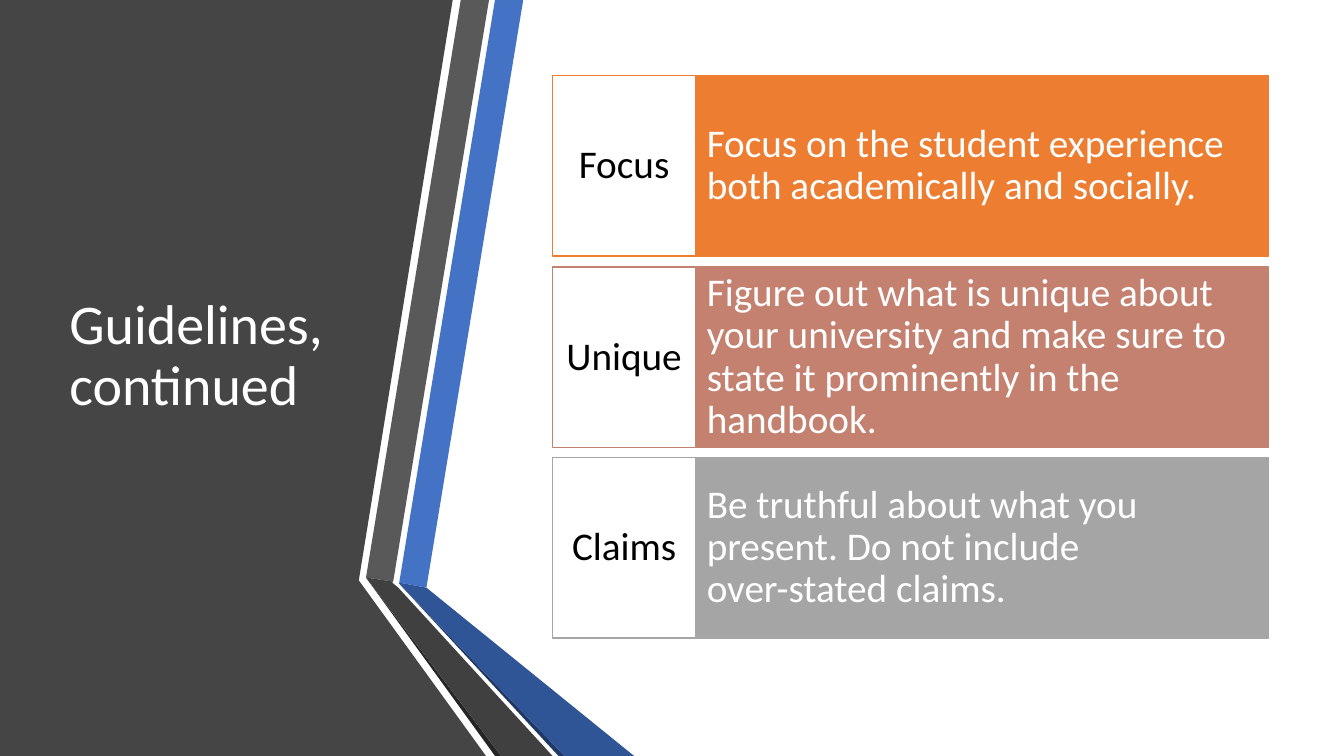
from pptx import Presentation
from pptx.dml.color import RGBColor
from pptx.enum.shapes import MSO_SHAPE
from pptx.enum.text import MSO_ANCHOR, PP_ALIGN
from pptx.util import Emu, Pt

RECTANGLE = MSO_SHAPE.RECTANGLE
MIDDLE = MSO_ANCHOR.MIDDLE
LEFT = PP_ALIGN.LEFT
CENTER = PP_ALIGN.CENTER

EMU_PER_PX = 9144
FONT = "Calibri"
WHITE = "FFFFFF"
BLACK = "000000"

RIBBON_PARTS = [
    ("454545", [(0, 0), (449, 0), (356, 575), (356, 576), (482, 750), (0, 750)]),
    ("4472C4", [(396, 578), (423, 583), (519, 0), (491, 0)]),
    ("595959", [(485, 0), (457, 0), (363, 573), (390, 577)]),
    ("262626", [(363, 573), (491, 750), (497, 750)]),
    ("203864", [(396, 579), (554, 750), (560, 750)]),
    ("2F5597", [(396, 579), (560, 750), (629, 750), (423, 583), (396, 578)]),
    ("404040", [(548, 750), (395, 583), (389, 578), (390, 577), (363, 573), (497, 750)]),
]

GUIDELINES = [
    ("Focus", "Focus on the student experience both academically and socially.", "ED7D31"),
    ("Unique", "Figure out what is unique about your university and make sure to "
     "state it prominently in the handbook.", "C48170"),
    ("Claims", "Be truthful about what you present. Do not include\vover-stated claims.",
     "A5A5A5"),
]
ROWS_TOP = 75
ROW_PITCH = 189.5
ROW_HEIGHT = 179
LABEL_LEFT, LABEL_WIDTH = 548, 142
DETAIL_LEFT, DETAIL_WIDTH = 690, 568


def px(length):
    """Convert px to EMU."""
    return Emu(length * EMU_PER_PX)


def color(hex_string):
    """Convert a hex string to a colour."""
    return RGBColor.from_string(hex_string)


def write_text(shape, text, size, text_color, alignment, margins):
    """Fill a shape with one vertically centred paragraph."""
    side, end = margins
    text_frame = shape.text_frame
    text_frame.word_wrap = True
    text_frame.vertical_anchor = MIDDLE
    text_frame.margin_left = text_frame.margin_right = px(side)
    text_frame.margin_top = text_frame.margin_bottom = px(end)
    text_frame.text = text
    paragraph = text_frame.paragraphs[0]
    paragraph.alignment = alignment
    paragraph.line_spacing = 0.9
    for run in paragraph.runs:
        run.font.name = FONT
        run.font.size = Pt(size)
        run.font.color.rgb = color(text_color)


def add_ribbon_part(slide, fill, points):
    """Draw one closed polygon of the folded ribbon."""
    builder = slide.shapes.build_freeform(*points[0], scale=EMU_PER_PX)
    builder.add_line_segments(points[1:], close=True)
    shape = builder.convert_to_shape()
    shape.shadow.inherit = False
    shape.fill.solid()
    shape.fill.fore_color.rgb = color(fill)
    shape.line.fill.background()


def add_title(slide, text):
    """Add the title over the dark panel."""
    box = slide.shapes.add_textbox(px(59), px(75), px(304), px(558))
    write_text(box, text, 40, WHITE, LEFT, (10, 5))


def add_cell(slide, left, top, width, fill, line):
    """Add one outlined rectangle of a guideline row."""
    shape = slide.shapes.add_shape(RECTANGLE, px(left), px(top), px(width), px(ROW_HEIGHT))
    shape.shadow.inherit = False
    shape.fill.solid()
    shape.fill.fore_color.rgb = color(fill)
    shape.line.color.rgb = color(line)
    shape.line.width = Pt(1)
    return shape


def add_guideline(slide, top, label, detail, accent):
    """Add a row with a white label cell and a coloured detail cell."""
    detail_cell = add_cell(slide, DETAIL_LEFT, top, DETAIL_WIDTH, accent, accent)
    write_text(detail_cell, detail, 28, WHITE, LEFT, (11, 45))
    label_cell = add_cell(slide, LABEL_LEFT, top, LABEL_WIDTH, WHITE, accent)
    write_text(label_cell, label, 28, BLACK, CENTER, (8, 18))


def main():
    """Build and save the slide."""
    presentation = Presentation()
    presentation.slide_width = px(1333)
    presentation.slide_height = px(750)
    slide = presentation.slides.add_slide(presentation.slide_layouts[6])
    for fill, points in RIBBON_PARTS:
        add_ribbon_part(slide, fill, points)
    add_title(slide, "Guidelines, continued")
    for row, (label, detail, accent) in enumerate(GUIDELINES):
        add_guideline(slide, ROWS_TOP + round(row * ROW_PITCH), label, detail, accent)
    presentation.save("out.pptx")


if __name__ == "__main__":
    main()
